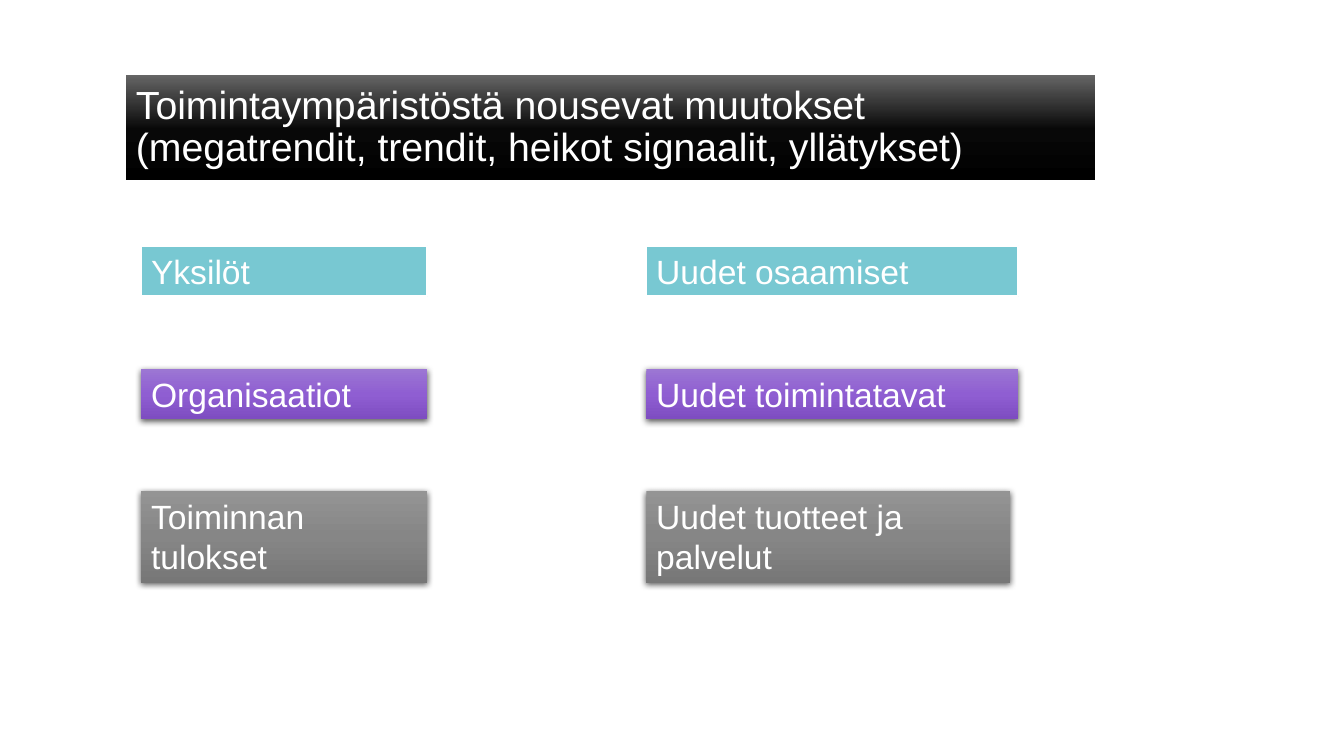
from dataclasses import dataclass

from lxml.etree import SubElement
from pptx import Presentation
from pptx.dml.color import RGBColor
from pptx.enum.shapes import MSO_SHAPE as Shape
from pptx.enum.text import MSO_ANCHOR as Anchor, MSO_AUTO_SIZE as Fit, PP_ALIGN as Align
from pptx.oxml.ns import qn
from pptx.util import Inches, Pt

WHITE = RGBColor(0xFF, 0xFF, 0xFF)
BLACK = RGBColor(0x00, 0x00, 0x00)
COAL = RGBColor(0x08, 0x08, 0x08)
SMOKE = RGBColor(0x66, 0x66, 0x66)
TEAL = RGBColor(0x78, 0xC8, 0xD2)
LILAC = RGBColor(0x9C, 0x77, 0xD3)
VIOLET = RGBColor(0x8F, 0x5E, 0xD2)
PURPLE = RGBColor(0x7E, 0x4D, 0xC1)
SILVER = RGBColor(0x94, 0x94, 0x94)
GREY = RGBColor(0x86, 0x86, 0x86)
STONE = RGBColor(0x77, 0x77, 0x77)


@dataclass(frozen=True)
class Style:
    """Colours are (percent, colour) stops from top to bottom; one stop is solid."""
    stops: tuple[tuple[int, RGBColor], ...]
    border: bool = False
    shadow: bool = False


@dataclass(frozen=True)
class Row:
    top: float
    height: float
    style: Style
    texts: tuple[str, str]
    widths: tuple[float, float]


HEAD = Style(((0, SMOKE), (52, COAL), (100, BLACK)))
FLAT = Style(((0, TEAL),), border=True)
BLOOM = Style(((0, LILAC), (50, VIOLET), (100, PURPLE)), shadow=True)
STEEL = Style(((0, SILVER), (50, GREY), (100, STONE)), shadow=True)

LEFTS = (1.4, 6.41)
ROWS = (
    Row(2.44, 0.5, FLAT, ("Yksilöt", "Uudet osaamiset"), (2.84, 3.69)),
    Row(3.66, 0.5, BLOOM, ("Organisaatiot", "Uudet toimintatavat"), (2.84, 3.69)),
    Row(4.87, 0.91, STEEL, ("Toiminnan tulokset", "Uudet tuotteet ja palvelut"),
        (2.84, 3.61)),
)


def paint(box, style: Style) -> None:
    if len(style.stops) == 1:
        box.fill.solid()
        box.fill.fore_color.rgb = style.stops[0][1]
    else:
        box.fill.gradient()
        box.fill.gradient_angle = 270
        chain = box._element.spPr.find(".//" + qn("a:gsLst"))
        for old in list(chain):
            chain.remove(old)
        for place, tint in style.stops:
            stop = SubElement(chain, qn("a:gs"), pos=str(place * 1000))
            SubElement(stop, qn("a:srgbClr"), val=str(tint))
    if style.border:
        box.line.color.rgb = WHITE
        box.line.width = Pt(1.5)
    else:
        box.line.fill.background()


def shade(box) -> None:
    """Add a soft black shadow just below the box."""
    effects = box._element.spPr.find(qn("a:effectLst"))
    drop = SubElement(effects, qn("a:outerShdw"), blurRad=str(Pt(4.5)),
                      dist=str(Pt(1.5)), dir="5400000", rotWithShape="0")
    tint = SubElement(drop, qn("a:srgbClr"), val=str(BLACK))
    SubElement(tint, qn("a:alpha"), val="63000")


def add_box(slide, left: float, top: float, width: float, height: float,
            style: Style, text: str, size: int):
    box = slide.shapes.add_shape(Shape.RECTANGLE, Inches(left), Inches(top),
                                 Inches(width), Inches(height))
    box.shadow.inherit = False
    paint(box, style)
    if style.shadow:
        shade(box)
    frame = box.text_frame
    frame.word_wrap = True
    frame.vertical_anchor = Anchor.TOP
    para = frame.paragraphs[0]
    para.alignment = Align.LEFT
    for index, line in enumerate(text.split("\n")):
        if index:
            para.add_line_break()
        run = para.add_run()
        run.text = line
        run.font.name = "Arial"
        run.font.size = Pt(size)
        run.font.color.rgb = WHITE
    return box


def main() -> None:
    deck = Presentation()
    deck.slide_width, deck.slide_height = Inches(13.33), Inches(7.5)
    slide = deck.slides.add_slide(deck.slide_layouts[6])

    title = add_box(slide, 1.25, 0.74, 9.61, 1.05, HEAD,
                    "Toimintaympäristöstä nousevat muutokset\n"
                    "(megatrendit, trendit, heikot signaalit, yllätykset)", 28)
    title.text_frame.vertical_anchor = Anchor.MIDDLE
    title.text_frame.paragraphs[0].line_spacing = 0.9

    for col, left in enumerate(LEFTS):
        for row in ROWS:
            box = add_box(slide, left, row.top, row.widths[col], row.height,
                          row.style, row.texts[col], 24)
            box.text_frame.auto_size = Fit.SHAPE_TO_FIT_TEXT

    deck.save("out.pptx")


if __name__ == "__main__":
    main()
